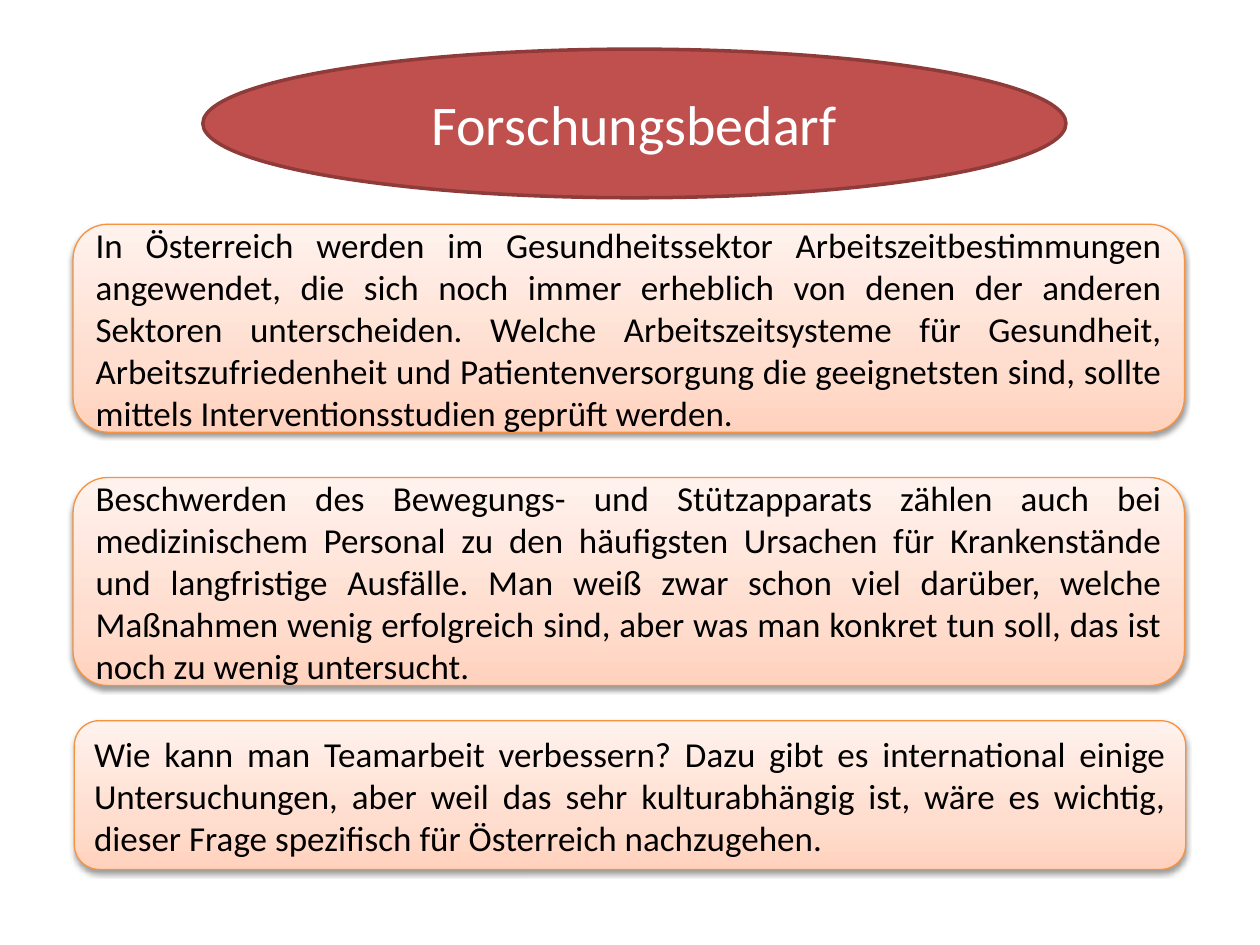
from lxml import etree
from pptx import Presentation
from pptx import util as u
from pptx.dml.color import RGBColor
from pptx.enum import shapes, text
from pptx.oxml import ns

WIDE, HIGH = 10, 7.5
FONT = "Calibri"
STOPS = ((0, "FFD2BD"), (35, "FFDED0"), (100, "FFF2ED"))
OVAL = (1.61, 0.39, 6.85, 1.18)
CARDS = (
    (0.58, 1.78, 1.65,
     "In Österreich werden im Gesundheitssektor Arbeitszeitbestimmungen "
     "angewendet, die sich noch immer erheblich von denen der anderen "
     "Sektoren unterscheiden. Welche Arbeitszeitsysteme für Gesundheit, "
     "Arbeitszufriedenheit und Patientenversorgung die geeignetsten sind, "
     "sollte mittels Interventionsstudien geprüft werden."),
    (0.58, 3.79, 1.65,
     "Beschwerden des Bewegungs- und Stützapparats zählen auch bei "
     "medizinischem Personal zu den häufigsten Ursachen für Krankenstände "
     "und langfristige Ausfälle. Man weiß zwar schon viel darüber, welche "
     "Maßnahmen wenig erfolgreich sind, aber was man konkret tun soll, das "
     "ist noch zu wenig untersucht."),
    (0.59, 5.72, 1.18,
     "Wie kann man Teamarbeit verbessern? Dazu gibt es international einige "
     "Untersuchungen, aber weil das sehr kulturabhängig ist, wäre es "
     "wichtig, dieser Frage spezifisch für Österreich nachzugehen."),
)


def color(code):
    """Turn a hex string into a colour."""
    return RGBColor.from_string(code)


def node(parent, tag, **attrs):
    """Append a drawing element with its attributes."""
    item = etree.SubElement(parent, ns.qn("a:" + tag))
    for key, val in attrs.items():
        item.set(key, str(val))
    return item


def write(shape, words, size=20, ink="000000", align="JUSTIFY"):
    """Fill a shape with one formatted paragraph."""
    frame = shape.text_frame
    frame.word_wrap = True
    frame.auto_size = text.MSO_AUTO_SIZE.NONE
    frame.vertical_anchor = text.MSO_ANCHOR.MIDDLE
    para = frame.paragraphs[0]
    para.alignment = getattr(text.PP_ALIGN, align)
    run = para.add_run()
    run.text = words
    run.font.name, run.font.size = FONT, u.Pt(size)
    run.font.color.rgb = color(ink)


def outline(slide, kind, box, edge, width):
    """Add an outlined preset shape without a shadow."""
    shape = slide.shapes.add_shape(kind, *map(u.Inches, box))
    shape.shadow.inherit = False
    shape.line.color.rgb = color(edge)
    shape.line.width = u.Pt(width)
    return shape


def blend(shape):
    """Give a shape the upward peach gradient."""
    shape.fill.gradient()
    shape.fill.gradient_angle = 90
    stops = shape._element.spPr.find(".//" + ns.qn("a:gsLst"))
    for old in list(stops):
        stops.remove(old)
    for pos, code in STOPS:
        node(node(stops, "gs", pos=pos * 1000), "srgbClr", val=code)


def shade(shape):
    """Cast a soft shadow straight down."""
    effect = shape._element.spPr.find(ns.qn("a:effectLst"))
    cast = node(effect, "outerShdw", blurRad=u.Pt(3.1), dist=u.Pt(1.6),
                dir=90 * 60000, rotWithShape=0)
    node(node(cast, "srgbClr", val="000000"), "alpha", val=38000)


def head(slide, words):
    """Set the title on a red oval."""
    oval = outline(slide, shapes.MSO_SHAPE.OVAL, OVAL, "8E3B39", 2)
    oval.fill.solid()
    oval.fill.fore_color.rgb = color("C0504D")
    title = slide.shapes.title
    title.left, title.top, title.width, title.height = map(u.Inches, OVAL)
    oval._element.addnext(title._element)
    write(title, words, size=32, ink="FFFFFF", align="CENTER")


def card(slide, left, top, height, words):
    """Add a rounded card with justified text."""
    box = (left, top, 8.82, height)
    shape = outline(slide, shapes.MSO_SHAPE.ROUNDED_RECTANGLE, box,
                    "F69240", 0.75)
    blend(shape)
    shade(shape)
    write(shape, words)


def main():
    """Build and save the slide."""
    deck = Presentation()
    deck.slide_width, deck.slide_height = u.Inches(WIDE), u.Inches(HIGH)
    slide = deck.slides.add_slide(deck.slide_layouts[5])
    head(slide, "Forschungsbedarf")
    for item in CARDS:
        card(slide, *item)
    deck.save("out.pptx")


if __name__ == "__main__":
    main()
